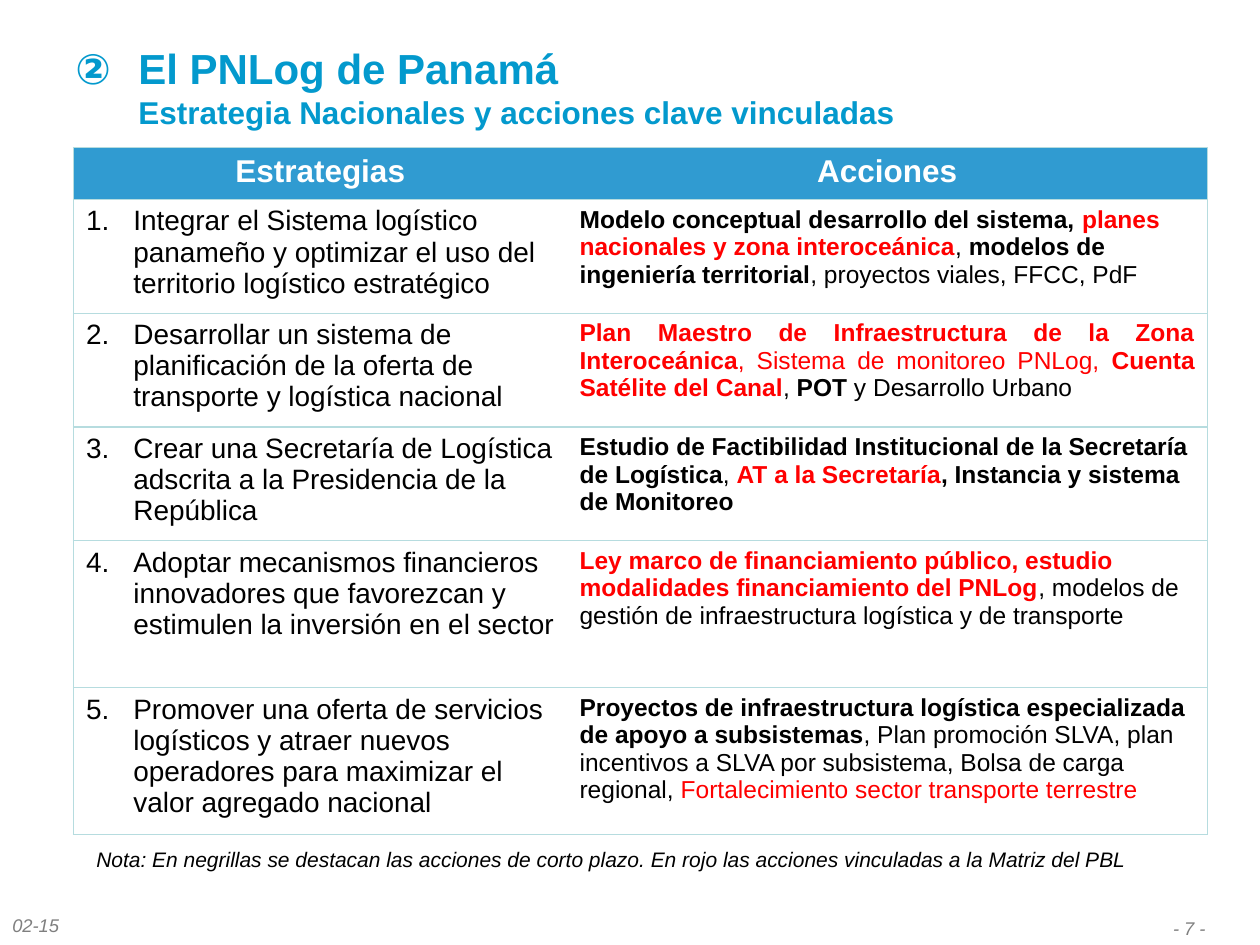
from lxml.etree import SubElement
from pptx import Presentation
from pptx.dml.color import RGBColor
from pptx.enum.text import MSO_ANCHOR, PP_ALIGN
from pptx.oxml.ns import qn
from pptx.util import Pt

FONT = "Arial"
BLUE, HEADER_BLUE, BORDER = "0399CD", "309BD1", "B6DCDF"
BLACK, WHITE, RED, GRAY = "000000", "FFFFFF", "FF0000", "7F7F7F"

HEADERS = ["Estrategias", "Acciones"]
COLUMN_WIDTHS = [282, 366]
ROW_HEIGHTS = [29.5, 65, 65, 65, 84, 84]

# Each action is a list of (text, bold, colour) pieces.
STRATEGIES = [
    ("Integrar el Sistema logístico panameño y optimizar el uso del territorio logístico estratégico",
     [("Modelo conceptual desarrollo del sistema, ", True, BLACK),
      ("planes nacionales y zona interoceánica", True, RED),
      (", ", False, BLACK),
      ("modelos de ingeniería territorial", True, BLACK),
      (", proyectos viales, FFCC, PdF", False, BLACK)]),
    ("Desarrollar un sistema de planificación de la oferta de transporte y logística nacional",
     [("Plan Maestro de Infraestructura de la Zona Interoceánica", True, RED),
      (", Sistema de monitoreo PNLog, ", False, RED),
      ("Cuenta Satélite del Canal", True, RED),
      (", ", False, BLACK),
      ("POT", True, BLACK),
      (" y Desarrollo Urbano", False, BLACK)]),
    ("Crear una Secretaría de Logística adscrita a la Presidencia de la República",
     [("Estudio de Factibilidad Institucional de la Secretaría de Logística", True, BLACK),
      (", ", False, BLACK),
      ("AT a la Secretaría", True, RED),
      (", Instancia y sistema de Monitoreo", True, BLACK)]),
    ("Adoptar mecanismos financieros innovadores que favorezcan y estimulen la inversión en el sector",
     [("Ley marco de financiamiento público, estudio modalidades financiamiento del PNLog", True, RED),
      (", modelos de gestión de infraestructura logística y de transporte", False, BLACK)]),
    ("Promover una oferta de servicios logísticos y atraer nuevos operadores para maximizar el "
     "valor agregado nacional",
     [("Proyectos de infraestructura logística especializada de apoyo a subsistemas", True, BLACK),
      (", Plan promoción SLVA, plan incentivos a SLVA por subsistema, Bolsa de carga regional, ",
       False, BLACK),
      ("Fortalecimiento sector transporte terrestre", False, RED)]),
]
JUSTIFIED_ROW = 2


def color(hex_string):
    return RGBColor.from_string(hex_string)


def format_run(run, size, hex_color, bold=False, italic=False):
    font = run.font
    font.name, font.size, font.bold, font.italic = FONT, Pt(size), bold, italic
    font.color.rgb = color(hex_color)


def number_paragraph(paragraph, scheme, start, indent):
    """Give the paragraph an automatic number with a hanging indent."""
    properties = paragraph._p.get_or_add_pPr()
    properties.set("marL", str(Pt(indent)))
    properties.set("indent", str(-Pt(indent)))
    SubElement(properties, qn("a:buFont"), typeface="+mj-lt")
    SubElement(properties, qn("a:buAutoNum"), type=scheme, startAt=str(start))


def add_text(slide, text, left, top, width, height, align=PP_ALIGN.LEFT, wrap=True):
    """Add a text box and return its paragraph."""
    text_frame = slide.shapes.add_textbox(Pt(left), Pt(top), Pt(width), Pt(height)).text_frame
    text_frame.word_wrap = wrap
    text_frame.text = text
    paragraph = text_frame.paragraphs[0]
    paragraph.alignment = align
    return paragraph


def add_title(slide):
    paragraph = add_text(
        slide, "El PNLog de Panamá\vEstrategia Nacionales y acciones clave vinculadas",
        36, 0, 642, 98.6)
    number_paragraph(paragraph, "circleNumDbPlain", 2, 36)
    for run, size in zip(paragraph.runs, [24, 18]):
        format_run(run, size, BLUE, bold=True)
    slide.shapes[-1].text_frame.vertical_anchor = MSO_ANCHOR.MIDDLE


def set_borders(cell, sides):
    """Draw the named sides and leave the others without a line."""
    properties = cell._tc.get_or_add_tcPr()
    for side in "LRTB":
        line = SubElement(properties, qn(f"a:ln{side}"), w=str(Pt(0.75)))
        if side in sides:
            fill = SubElement(line, qn("a:solidFill"))
            SubElement(fill, qn("a:srgbClr"), val=BORDER)
        else:
            SubElement(line, qn("a:noFill"))


def fill_header(cell, text):
    cell.fill.solid()
    cell.fill.fore_color.rgb = color(HEADER_BLUE)
    cell.text = text
    paragraph = cell.text_frame.paragraphs[0]
    paragraph.alignment = PP_ALIGN.CENTER
    format_run(paragraph.runs[0], 18, WHITE, bold=True)


def fill_strategy(cell, number, text):
    cell.fill.background()
    cell.text = text
    paragraph = cell.text_frame.paragraphs[0]
    number_paragraph(paragraph, "arabicPeriod", number, 27)
    format_run(paragraph.runs[0], 16, BLACK)


def fill_action(cell, pieces):
    cell.fill.background()
    paragraph = cell.text_frame.paragraphs[0]
    for text, bold, hex_color in pieces:
        run = paragraph.add_run()
        run.text = text
        format_run(run, 14, hex_color, bold)
    return paragraph


def add_strategy_table(slide):
    table = slide.shapes.add_table(
        len(ROW_HEIGHTS), len(COLUMN_WIDTHS), Pt(42), Pt(84.5),
        Pt(sum(COLUMN_WIDTHS)), Pt(sum(ROW_HEIGHTS))).table
    table.first_row = table.horz_banding = False
    for column, width in zip(table.columns, COLUMN_WIDTHS):
        column.width = Pt(width)
    for row, height in zip(table.rows, ROW_HEIGHTS):
        row.height = Pt(height)
        for cell, side in zip(row.cells, "LR"):
            set_borders(cell, side + "TB")
    for cell, header in zip(table.rows[0].cells, HEADERS):
        fill_header(cell, header)
    for number, (strategy, action) in enumerate(STRATEGIES, start=1):
        fill_strategy(table.cell(number, 0), number, strategy)
        paragraph = fill_action(table.cell(number, 1), action)
        if number == JUSTIFIED_ROW:
            paragraph.alignment = PP_ALIGN.JUSTIFY
            paragraph.space_after = Pt(6)


def add_note(slide, text, size, hex_color, *place, **options):
    """Add one line of italic text."""
    paragraph = add_text(slide, text, *place, **options)
    format_run(paragraph.runs[0], size, hex_color, italic=True)


def main():
    presentation = Presentation()
    presentation.slide_width, presentation.slide_height = Pt(720), Pt(540)
    slide = presentation.slides.add_slide(presentation.slide_layouts[6])
    add_title(slide)
    add_note(slide, "02-15", 10.5, GRAY, 0, 519, 78, 21)
    add_note(slide, "- 7 -", 10.5, GRAY, 630, 520.5, 66, 19.5, align=PP_ALIGN.RIGHT)
    add_strategy_table(slide)
    add_note(slide, "Nota: En negrillas se destacan las acciones de corto plazo. "
             "En rojo las acciones vinculadas a la Matriz del PBL",
             12, BLACK, 48, 480, 626, 21.8, wrap=False)
    presentation.save("out.pptx")


if __name__ == "__main__":
    main()
